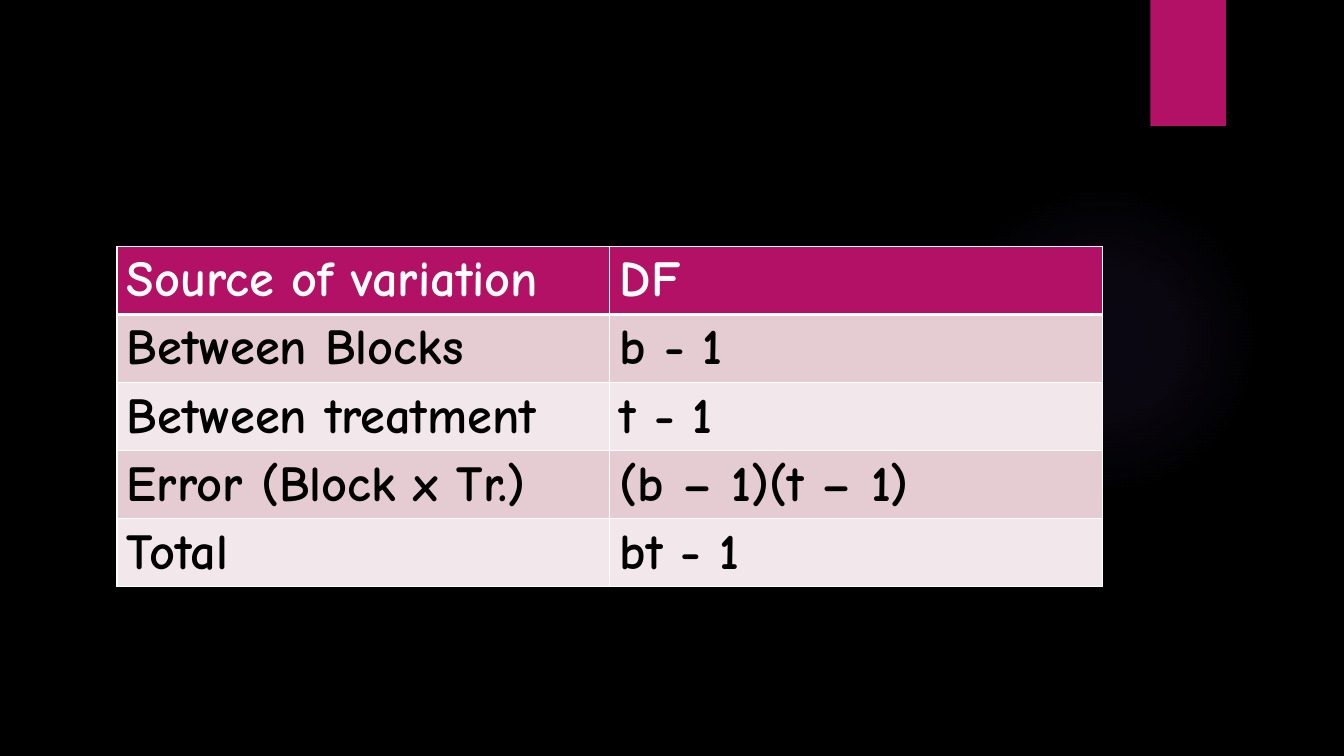
from lxml.etree import SubElement
from pptx import Presentation
from pptx.dml.color import RGBColor
from pptx.enum.shapes import MSO_SHAPE as Shape
from pptx.oxml import parse_xml
from pptx.oxml.ns import nsdecls, qn
from pptx.util import Pt

WHITE, BLACK, MAGENTA = "FFFFFF", "000000", "B31166"
BANDS = ["E5CCD3", "F2E7EA"]


def paint(fill, color):
    fill.solid()
    fill.fore_color.rgb = RGBColor.from_string(color)


def add_border(cell, index, side, width):
    line = parse_xml(
        f'<a:{side} {nsdecls("a")} w="{Pt(width)}"><a:solidFill>'
        f'<a:srgbClr val="{WHITE}"/></a:solidFill></a:{side}>')
    cell._tc.get_or_add_tcPr().insert(index, line)


deck = Presentation()
deck.slide_width, deck.slide_height = Pt(960), Pt(540)
page = deck.slides.add_slide(deck.slide_layouts[6])
paint(page.background.fill, BLACK)

# Faint round glow
glow = page.shapes.add_shape(Shape.OVAL, Pt(677.5), Pt(131.8), Pt(221.8), Pt(221.8))
glow.shadow.inherit = False
glow.line.fill.background()
glow.fill.gradient()
gradient = glow._element.spPr.find(qn("a:gradFill"))
for child in list(gradient):
    gradient.remove(child)
stops = SubElement(gradient, qn("a:gsLst"))
for position, alpha in [(0, 7), (36, 6), (69, 0)]:
    stop = SubElement(stops, qn("a:gs"), pos=str(position * 1000))
    color = SubElement(stop, qn("a:srgbClr"), val="9B6BF2")
    SubElement(color, qn("a:alpha"), val=str(alpha * 1000))
circle = SubElement(gradient, qn("a:path"))
circle.set("path", "circle")
SubElement(circle, qn("a:fillToRect"), l="50000", t="50000", r="50000", b="50000")

# Tab at the top edge
tab = page.shapes.add_shape(Shape.RECTANGLE, Pt(821.8), 0, Pt(54), Pt(90))
tab.shadow.inherit = False
tab.line.fill.background()
paint(tab.fill, MAGENTA)

# Degrees of freedom table
rows = [
    ("Source of variation", "DF"),
    ("Between Blocks", "b - 1"),
    ("Between treatment", "t - 1"),
    ("Error (Block x Tr.)", "(b – 1)(t – 1)"),
    ("Total", "bt - 1"),
]
row_height = 48.6
table = page.shapes.add_table(
    len(rows), 2, Pt(83.5), Pt(176), Pt(704.2), Pt(row_height * len(rows))).table
for row_number, texts in enumerate(rows):
    header = row_number == 0
    for column_number, text in enumerate(texts):
        cell = table.cell(row_number, column_number)
        paint(cell.fill, MAGENTA if header else BANDS[(row_number - 1) % 2])
        widths = {"lnL": 1, "lnR": 1, "lnT": 3 if row_number == 1 else 1,
                  "lnB": 3 if header else 1}
        for index, (side, width) in enumerate(widths.items()):
            add_border(cell, index, side, width)
        cell.text_frame.text = text
        font = cell.text_frame.paragraphs[0].runs[0].font
        font.name, font.size, font.bold = "Comic Neue", Pt(36), True
        font.color.rgb = RGBColor.from_string(WHITE if header else BLACK)

deck.save("out.pptx")
